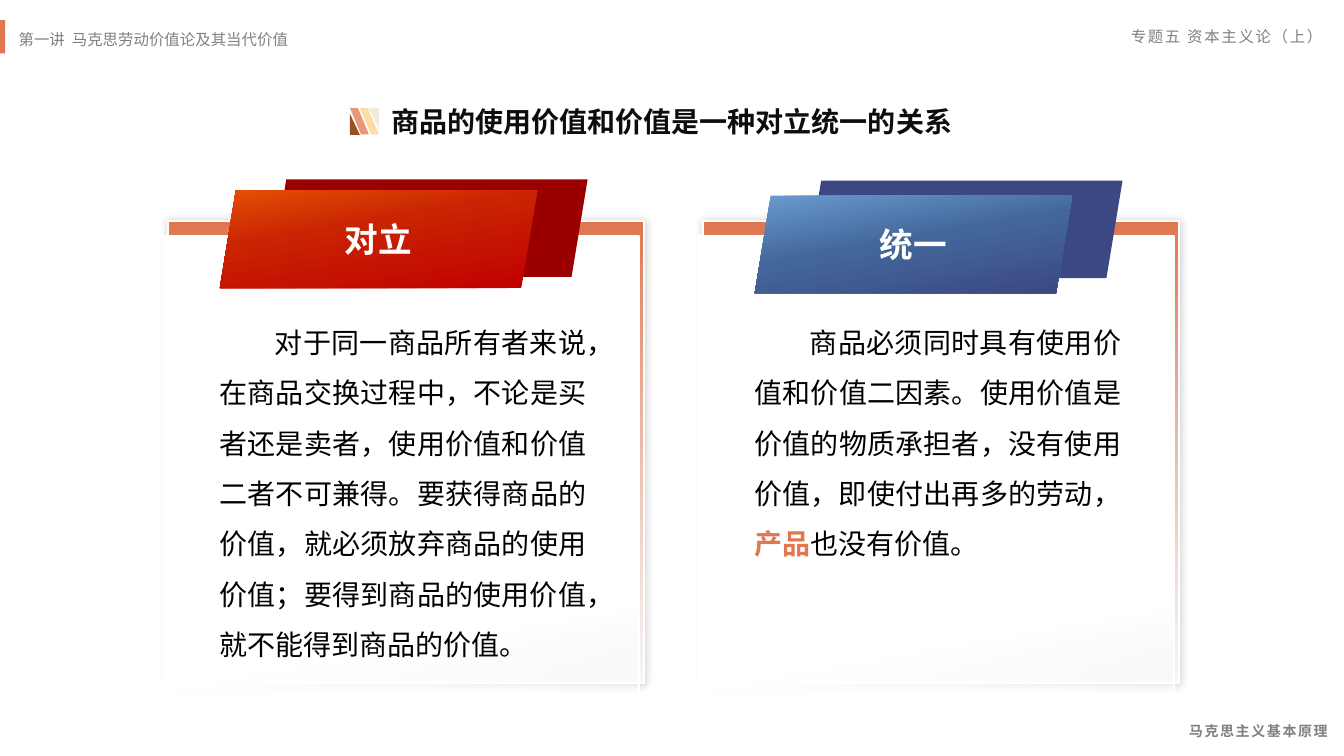
from pptx import Presentation
from pptx import util as u
from pptx.dml.color import RGBColor
from pptx.enum import shapes, text
from pptx.oxml import parse_xml
from pptx.oxml.ns import nsdecls, qn
from lxml import etree

FONT = "Noto Sans CJK SC"
HEX = {
    "white": "FFFFFF", "black": "000000", "ink": "0D0D0D", "gray": "808080",
    "coral": "E17751", "peach": "E89779", "sand": "FEDCA3",
    "cream": "F2EBD9", "brown": "985125",
    "wine": "9A0000", "red": "C00000", "flame": "C92403", "orange": "E55003",
    "sky": "6A9BCF", "steel": "43679B", "navy": "3C4882",
}
KIND = shapes.MSO_SHAPE
ALIGN = text.PP_ALIGN
STEP = 13.48  # distance between the two panels, cm


def color(name):
    return RGBColor.from_string(HEX[name])


def add_run(para, words, size, tone, bold=False, gap=0):
    """Add one run; gap is the letter spacing in points."""
    run = para.add_run()
    run.text = words
    font = run.font
    font.size, font.bold, font.name = u.Pt(size), bold, FONT
    font.color.rgb = color(tone)
    props = run._r.get_or_add_rPr()
    etree.SubElement(props, qn("a:ea")).set("typeface", FONT)
    if gap:
        props.set("spc", str(round(gap * 100)))


def add_text(slide, box, runs, align, space=1.0, indent=0):
    frame = slide.shapes.add_textbox(*map(u.Cm, box)).text_frame
    frame.word_wrap = True
    para = frame.paragraphs[0]
    para.alignment, para.line_spacing = align, space
    if indent:
        para._p.get_or_add_pPr().set("indent", str(u.Cm(indent)))
    for run in runs:
        add_run(para, *run)


def add_shape(slide, kind, box, fill=None, adj=None, flip=""):
    shape = slide.shapes.add_shape(kind, *map(u.Cm, box))
    shape.shadow.inherit = False
    shape.line.fill.background()
    shape.fill.solid()
    shape.fill.fore_color.rgb = color(fill or "white")
    if adj is not None:
        shape.adjustments[0] = adj
    for axis in flip:
        shape.element.spPr.find(qn("a:xfrm")).set("flip" + axis, "1")
    return shape


def fade(shape, stops, angle):
    """Fill with a gradient of (place, colour, opacity) stops, angle clockwise."""
    marks = "".join(
        f'<a:gs pos="{place * 1000}"><a:srgbClr val="{HEX[tone]}">'
        f'<a:alpha val="{alpha * 1000}"/></a:srgbClr></a:gs>'
        for place, tone, alpha in stops)
    grad = parse_xml(
        f'<a:gradFill {nsdecls("a")} rotWithShape="1"><a:gsLst>{marks}</a:gsLst>'
        f'<a:lin ang="{angle * 60000}" scaled="0"/></a:gradFill>')
    props = shape.element.spPr
    props.replace(props.find(qn("a:solidFill")), grad)


def add_glow(shape):
    """Give the shape a soft black shadow."""
    shape.element.spPr.find(qn("a:effectLst")).append(parse_xml(
        f'<a:outerShdw {nsdecls("a")} blurRad="{u.Pt(6)}" dist="0" dir="18900000" '
        f'algn="ctr" rotWithShape="0"><a:srgbClr val="{HEX["black"]}">'
        '<a:alpha val="20000"/></a:srgbClr></a:outerShdw>'))


def add_card(slide, left):
    back = add_shape(slide, KIND.RECTANGLE, (left + 4.24, 5.56, 11.99, 11.66))
    fade(back, [(0, "coral", 100), (100, "white", 80)], 90)
    add_glow(back)
    front = add_shape(slide, KIND.RECTANGLE, (left + 4.11, 5.94, 11.99, 11.66))
    fade(front, [(83, "white", 100), (100, "white", 32)], 80)
    for sheet in (back, front):
        sheet.line.color.rgb = color("white")
        sheet.line.width = u.Pt(1.5)


def add_tag(slide, left, tops, label, shade, stops, angle):
    size = (8, 2.46)
    add_shape(slide, KIND.PARALLELOGRAM, (left + 6.81, tops[0], *size), shade, 0.165)
    front = add_shape(slide, KIND.PARALLELOGRAM, (left + 5.54, tops[1], *size), adj=0.165)
    fade(front, stops, angle)
    frame = front.text_frame
    frame.vertical_anchor = text.MSO_ANCHOR.MIDDLE
    para = frame.paragraphs[0]
    para.alignment = ALIGN.CENTER
    add_run(para, label, 24, "white", True)


def add_body(slide, left, high, runs):
    add_text(slide, (left + 5.28, 7.65, 9.75, high), runs, ALIGN.JUSTIFY, 1.5, 1.4)


def add_frame(slide):
    """Add the running heads and the footer."""
    add_text(slide, (25.91, 0.56, 7.67, 0.74),
             [("专题五 资本主义论（上）", 11, "gray", False, 1.2)], ALIGN.RIGHT)
    add_text(slide, (0.22, 0.53, 19.8, 0.76),
             [("第一讲", 11, "gray"), (" ", 11, "gray", False, 2.5),
              ("马克思劳动价值论及其当代价值", 11, "gray")], ALIGN.JUSTIFY, 1.2)
    add_text(slide, (27.13, 17.88, 6.58, 0.81),
             [("马克思主义基本原理", 10, "gray", True, 1.2)], ALIGN.RIGHT, 1.5)
    add_shape(slide, KIND.RECTANGLE, (0, 0.51, 0.13, 0.84), "coral")


def add_title(slide):
    add_text(slide, (8.79, 2.51, 16.28, 1.12),
             [("商品的使用价值和价值是一种对立统一的关系", 20, "ink", True)], ALIGN.CENTER)
    left, top = 8.82, 2.72
    for shift, tone in ((0.25, "sand"), (0, "peach")):
        add_shape(slide, KIND.PARALLELOGRAM, (left + shift, top, 0.48, 0.67),
                  tone, 0.585, "H")
    add_shape(slide, KIND.RIGHT_TRIANGLE, (left + 0.48, top, 0.25, 0.53), "cream", flip="HV")
    add_shape(slide, KIND.RIGHT_TRIANGLE, (left, top + 0.15, 0.25, 0.53), "brown")


def main():
    deck = Presentation()
    deck.slide_width, deck.slide_height = u.Cm(33.87), u.Cm(19.05)
    slide = deck.slides.add_slide(deck.slide_layouts[6])
    add_frame(slide)
    add_title(slide)

    add_card(slide, 0)
    add_tag(slide, 0, (4.52, 4.8), "对立", "wine",
            [(0, "red", 100), (62, "flame", 100), (100, "orange", 100)], 260)
    add_body(slide, 0, 9.25, [
        ("对于同一商品所有者来说，在商品交换过程中，不论是买者还是卖者，"
         "使用价值和价值二者不可兼得。要获得商品的价值，就必须放弃商品的使用价值；"
         "要得到商品的使用价值，就不能得到商品的价值。", 20, "black")])

    add_card(slide, STEP)
    add_tag(slide, STEP, (4.55, 4.93), "统一", "navy",
            [(0, "sky", 100), (46, "steel", 100), (100, "navy", 100)], 80)
    add_body(slide, STEP, 6.53, [
        ("商品必须同时具有使用价值和价值二因素。使用价值是价值的物质承担者，"
         "没有使用价值，即使付出再多的劳动，", 20, "black"),
        ("产品", 20, "coral", True),
        ("也没有价值。", 20, "black")])
    deck.save("out.pptx")


if __name__ == "__main__":
    main()
